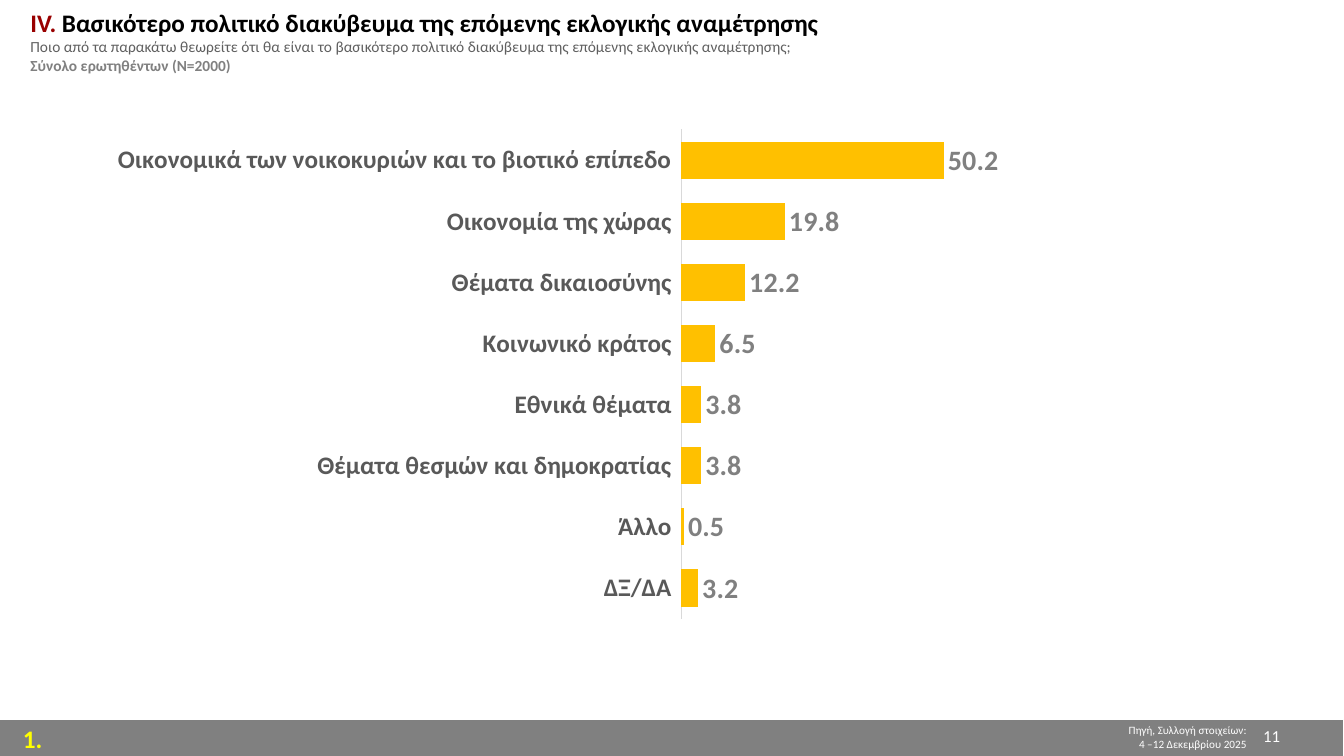
from pptx import Presentation
from pptx.chart.data import CategoryChartData
from pptx.dml.color import RGBColor
from pptx.enum.chart import XL_CHART_TYPE, XL_LABEL_POSITION, XL_TICK_LABEL_POSITION, XL_TICK_MARK
from pptx.enum.shapes import MSO_SHAPE
from pptx.enum.text import MSO_ANCHOR, MSO_AUTO_SIZE, PP_ALIGN
from pptx.oxml import parse_xml
from pptx.oxml.ns import nsdecls
from pptx.util import Cm, Pt

BAR = XL_CHART_TYPE.BAR_CLUSTERED
OUTSIDE = XL_LABEL_POSITION.OUTSIDE_END
LOW = XL_TICK_LABEL_POSITION.LOW
NO_TICK = XL_TICK_MARK.NONE
RECT = MSO_SHAPE.RECTANGLE
TOP, MIDDLE = MSO_ANCHOR.TOP, MSO_ANCHOR.MIDDLE
LEFT, RIGHT = PP_ALIGN.LEFT, PP_ALIGN.RIGHT
NO_FIT = MSO_AUTO_SIZE.NONE


class Theme:
    face, base = "Calibri", "Roboto"
    white, black, gray = "FFFFFF", "000000", "808080"
    red, slate, yellow = "990000", "5F5F5F", "FFFF00"
    gold, label, rule = "FFC000", "595959", "D9D9D9"
    tiny, tick, small, page, head, value = 8, 10, 11, 12, 18, 20


def style(font, size, color, bold=False, face=Theme.face):
    font.name, font.size, font.bold = face, Pt(size), bold
    font.color.rgb = RGBColor.from_string(color)


def add_note(text, box, size, color, bold=False, align=LEFT, anchor=TOP):
    frame = slide.shapes.add_textbox(*map(Cm, box)).text_frame
    frame.word_wrap = True
    frame.vertical_anchor = anchor
    frame.text = text
    for para in frame.paragraphs:
        para.alignment = align
        style(para.runs[0].font, size, color, bold)


deck = Presentation()
deck.slide_width, deck.slide_height = Cm(33.87), Cm(19.05)
slide = deck.slides.add_slide(deck.slide_layouts[5])

# Footer band
band = slide.shapes.add_shape(RECT, Cm(0), Cm(18.14), Cm(33.87), Cm(0.94))
band.shadow.inherit = False
band.fill.solid()
band.fill.fore_color.rgb = RGBColor.from_string(Theme.gray)
band.line.color.rgb = RGBColor.from_string(Theme.white)
band.line.width = Pt(0.75)

# Footer texts
add_note("Πηγή, Συλλογή στοιχείων:\n4 –12 Δεκεμβρίου 2025", (24.33, 18.11, 7.34, 0.94),
         Theme.tiny, Theme.white, align=RIGHT)
add_note("1.", (0.33, 18.11, 1.7, 1.02), Theme.head, Theme.yellow, bold=True)
add_note("11", (24.89, 18.03, 7.62, 1.02), Theme.page, Theme.white,
         align=RIGHT, anchor=MIDDLE)

# Title with question and sample
title = slide.shapes.title
title.left, title.top, title.width, title.height = Cm(0.51), Cm(0.05), Cm(32), Cm(1.96)
frame = title.text_frame
frame.auto_size = NO_FIT
frame.word_wrap = True
frame.vertical_anchor = TOP
lines = [
    [("ΙV. ", Theme.head, Theme.red, True),
     ("Βασικότερο πολιτικό διακύβευμα της επόμενης εκλογικής αναμέτρησης",
      Theme.head, Theme.black, True)],
    [("Ποιο από τα παρακάτω θεωρείτε ότι θα είναι το βασικότερο πολιτικό διακύβευμα "
      "της επόμενης εκλογικής αναμέτρησης;", Theme.small, Theme.slate, False)],
    [("Σύνολο ερωτηθέντων (Ν=2000)", Theme.small, Theme.gray, True)],
]
for row, parts in enumerate(lines):
    para = frame.add_paragraph() if row else frame.paragraphs[0]
    para.alignment = LEFT
    props = para._p.get_or_add_pPr()
    props.set("marL", str(Cm(0.97)))
    props.set("indent", str(Cm(-0.97)))
    for text, size, color, bold in parts:
        run = para.add_run()
        run.text = text
        style(run.font, size, color, bold)

# Chart data
shares = {
    "Οικονομικά των νοικοκυριών και το βιοτικό επίπεδο": 50.2,
    "Οικονομία της χώρας": 19.8,
    "Θέματα δικαιοσύνης": 12.2,
    "Κοινωνικό κράτος": 6.5,
    "Εθνικά θέματα": 3.8,
    "Θέματα θεσμών και δημοκρατίας": 3.8,
    "Άλλο": 0.5,
    "ΔΞ/ΔΑ": 3.2,
}
data = CategoryChartData(number_format="0.0")
data.categories = list(shares)
data.add_series("Series 1", list(shares.values()))
chart = slide.shapes.add_chart(BAR, Cm(-2.26), Cm(2.36), Cm(32.61), Cm(14.12), data).chart
chart.has_legend = False
chart.has_title = False
style(chart.font, Theme.tick, Theme.black, face=Theme.base)

# Bars and values
plot = chart.plots[0]
plot.gap_width = 65
plot.vary_by_categories = False
fill = plot.series[0].format.fill
fill.solid()
fill.fore_color.rgb = RGBColor.from_string(Theme.gold)
plot.has_data_labels = True
labels = plot.data_labels
labels.show_value = True
labels.position = OUTSIDE
labels.number_format, labels.number_format_is_linked = "0.0", False
style(labels.font, Theme.value, Theme.gray, bold=True)

# Axes
names = chart.category_axis
names.reverse_order = True
names.major_tick_mark = names.minor_tick_mark = NO_TICK
names.tick_label_position = LOW
names.format.line.color.rgb = RGBColor.from_string(Theme.rule)
names.format.line.width = Pt(0.75)
style(names.tick_labels.font, Theme.head, Theme.label, bold=True)
scale = chart.value_axis
scale.minimum_scale, scale.maximum_scale, scale.major_unit = 0, 100, 20
scale.has_major_gridlines = False
scale.visible = False

# Plot area placement, as shares of the chart frame
area = chart._chartSpace.chart.plotArea
for old in area.xpath("c:layout"):
    area.remove(old)
spots = "".join(f'<c:{key} val="{num}"/>' for key, num in
                [("x", 0.596), ("y", 0.064), ("w", 0.404), ("h", 0.873)])
area.insert(0, parse_xml(
    f'<c:layout {nsdecls("c")}><c:manualLayout><c:layoutTarget val="inner"/>'
    f'<c:xMode val="edge"/><c:yMode val="edge"/>{spots}</c:manualLayout></c:layout>'))

deck.save("out.pptx")
